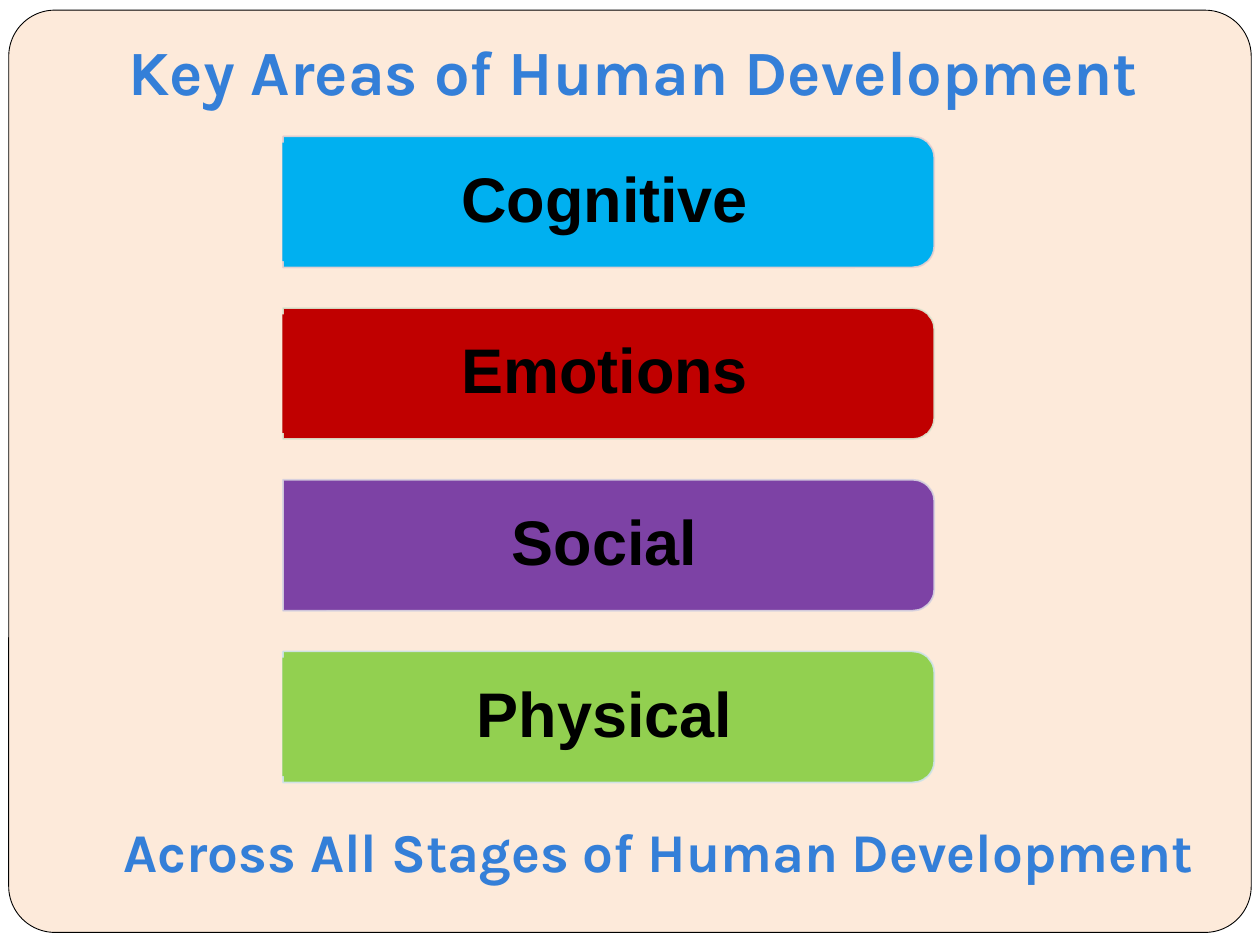
from dataclasses import dataclass

from lxml import etree
from pptx import Presentation
from pptx.dml.color import RGBColor
from pptx.enum import shapes, text
from pptx.oxml.ns import qn
from pptx.util import Pt


@dataclass(frozen=True)
class Theme:
    card: str = "FDEADA"
    ink: str = "000000"
    heading: str = "347FD8"
    heading_font: str = "Karla"
    label_font: str = "Arial"
    title_size: float = 36
    footer_size: float = 31.2
    label_size: float = 36


HEADING_INSETS = (7.2, 3.6, 7.2, 7.2)
LABEL_INSETS = (4.3, 2.2, 4.3, 2.2)

# label, bar fill, bar outline, fill opacity in percent, label has its own fill
AREAS = [
    ("Cognitive", "00B0F0", "E8D0D0", 100, True),
    ("Emotions", "C00000", "DEE7D1", 100, True),
    ("Social", "7030A0", "D8D3E0", 90, False),
    ("Physical", "92D050", "D0E3EA", 100, True),
]
BAR_CENTER_X, FIRST_BAR_CENTER_Y, BAR_PITCH = 347.8, 115.4, 98.1
BAR_LENGTH, BAR_THICKNESS = 372.2, 74.9
LABEL_LEFT, LABEL_WIDTH, LABEL_HEIGHT = 161.3, 368.6, 67.7


def paint(fill, color, opacity=100):
    """Apply a solid colour; opacity is in percent."""
    fill.solid()
    fill.fore_color.rgb = RGBColor.from_string(color)
    if opacity < 100:
        for element in fill._xPr.iter(qn("a:srgbClr")):
            etree.SubElement(element, qn("a:alpha"), val=str(opacity * 1000))


def write(shape, words, *, size, font, color, insets, anchor, align,
          line_spacing=None, space_after=None):
    frame = shape.text_frame
    frame.word_wrap = True
    frame.auto_size = text.MSO_AUTO_SIZE.NONE
    frame.vertical_anchor = anchor
    (frame.margin_left, frame.margin_top,
     frame.margin_right, frame.margin_bottom) = map(Pt, insets)
    paragraph = frame.paragraphs[0]
    paragraph.alignment = align
    paragraph.line_spacing = line_spacing
    paragraph.space_after = space_after
    run = paragraph.add_run()
    run.text = words
    run.font.size, run.font.name, run.font.bold = Pt(size), font, True
    run.font.color.rgb = RGBColor.from_string(color)


class SlideBuilder:
    def __init__(self, slide, theme):
        self.slide = slide
        self.theme = theme

    def outlined(self, kind, box, fill, line, width, opacity=100, line_opacity=100):
        shape = self.slide.shapes.add_shape(kind, *map(Pt, box))
        shape.shadow.inherit = False
        paint(shape.fill, fill, opacity)
        paint(shape.line.fill, line, line_opacity)
        shape.line.width = Pt(width)
        return shape

    def card(self):
        """Add the rounded backdrop behind everything else."""
        shape = self.outlined(shapes.MSO_SHAPE.ROUNDED_RECTANGLE,
                              (5, 5.8, 710, 527), self.theme.card, self.theme.ink, 0.5)
        shape.adjustments[0] = 0.05
        self.slide.shapes._spTree.insert(2, shape._element)

    def heading(self, shape, words, size):
        write(shape, words, size=size, font=self.theme.heading_font,
              color=self.theme.heading, insets=HEADING_INSETS,
              anchor=text.MSO_ANCHOR.BOTTOM, align=text.PP_ALIGN.LEFT)

    def title(self, words, box):
        title = self.slide.shapes.title
        title.left, title.top, title.width, title.height = map(Pt, box)
        self.heading(title, words, self.theme.title_size)

    def footer(self, words, box):
        footer = self.slide.shapes.add_textbox(*map(Pt, box))
        self.heading(footer, words, self.theme.footer_size)

    def area_bar(self, center_y, words, fill, line, opacity, label_filled):
        """Add a bar turned a quarter so its rounded end is on the right."""
        box = (BAR_CENTER_X - BAR_THICKNESS / 2, center_y - BAR_LENGTH / 2,
               BAR_THICKNESS, BAR_LENGTH)
        bar = self.outlined(shapes.MSO_SHAPE.ROUND_2_SAME_RECTANGLE, box,
                            fill, line, 1, opacity, line_opacity=90)
        bar.rotation = 90
        label = self.slide.shapes.add_textbox(
            Pt(LABEL_LEFT), Pt(center_y - LABEL_HEIGHT / 2),
            Pt(LABEL_WIDTH), Pt(LABEL_HEIGHT))
        if label_filled:
            paint(label.fill, fill)
        write(label, words, size=self.theme.label_size, font=self.theme.label_font,
              color=self.theme.ink, insets=LABEL_INSETS,
              anchor=text.MSO_ANCHOR.MIDDLE, align=text.PP_ALIGN.CENTER,
              line_spacing=0.9, space_after=Pt(5.4))


def main():
    presentation = Presentation()
    presentation.slide_width, presentation.slide_height = Pt(720), Pt(540)
    slide = presentation.slides.add_slide(presentation.slide_layouts[5])
    builder = SlideBuilder(slide, Theme())
    builder.card()
    builder.title("Key Areas of Human Development", (66.2, -20.9, 612, 90))
    for index, area in enumerate(AREAS):
        builder.area_bar(FIRST_BAR_CENTER_Y + index * BAR_PITCH, *area)
    builder.footer("Across All Stages of Human Development", (63.4, 421.9, 653.8, 90))
    presentation.save("out.pptx")


if __name__ == "__main__":
    main()
